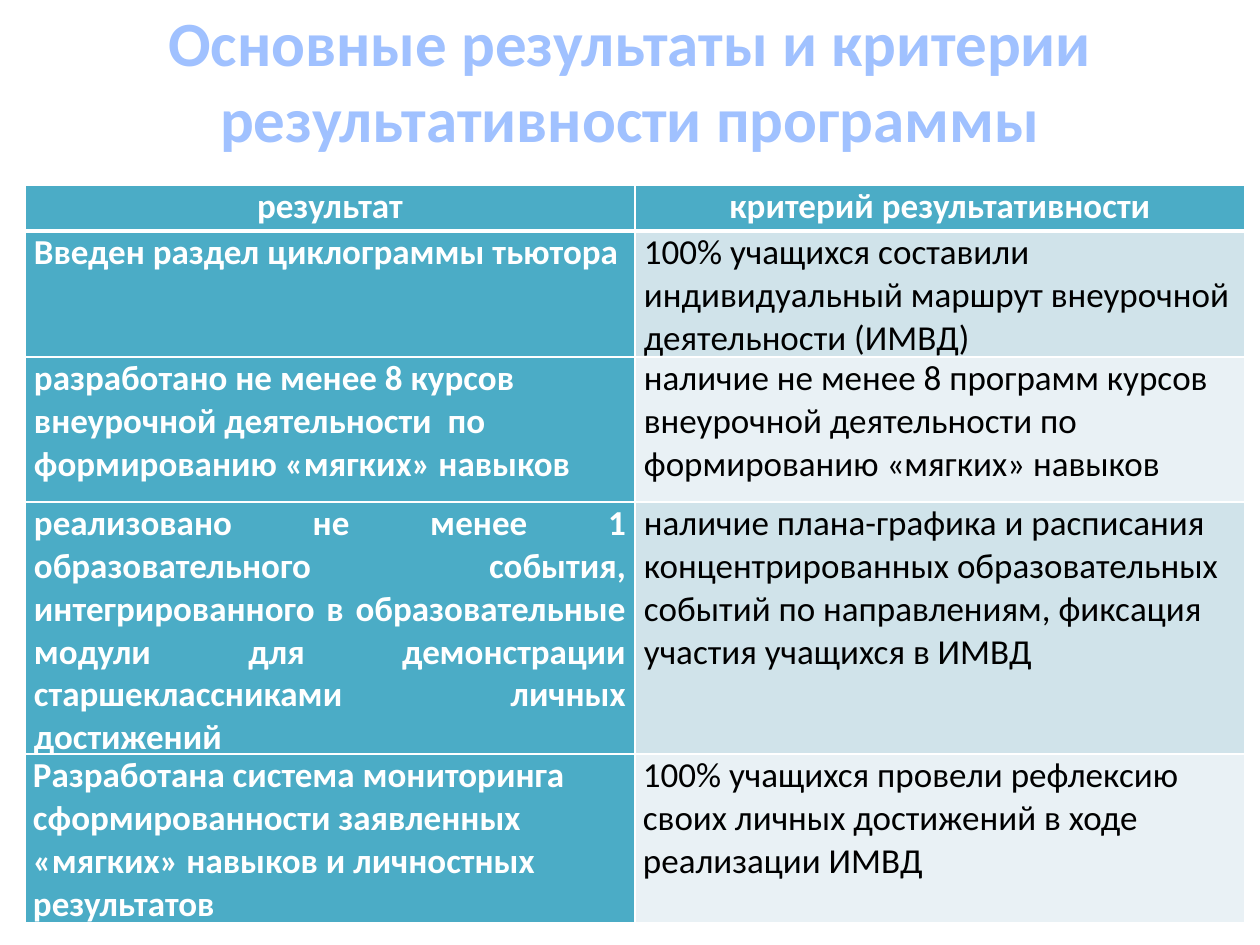
import dataclasses

import pptx
import pptx.dml.color
import pptx.enum.text
import pptx.oxml
import pptx.oxml.ns
import pptx.util

SCALE = 914400 / 126  # EMU in one px
FONT = "Calibri"
WHITE, BLACK, TEAL = "FFFFFF", "000000", "4BACC6"
BANDS = ("D0E3EA", "E9F1F5")
ALIGN = pptx.enum.text.PP_ALIGN
ANCHOR = pptx.enum.text.MSO_ANCHOR


@dataclasses.dataclass
class Row:
    left: str
    right: str
    high: int
    align: ALIGN = ALIGN.LEFT
    inset: int = 9


TITLE = "Основные результаты и критерии результативности программы"
ROWS = [
    Row("результат", "критерий результативности", 46, ALIGN.CENTER),
    Row("Введен раздел циклограммы тьютора",
        "100% учащихся составили индивидуальный маршрут внеурочной "
        "деятельности (ИМВД)", 111),
    Row("разработано не менее 8 курсов внеурочной деятельности  по "
        "формированию «мягких» навыков",
        "наличие не менее 8 программ курсов внеурочной деятельности по "
        "формированию «мягких» навыков", 145),
    Row("реализовано не менее 1 образовательного события, интегрированного "
        "в образовательные модули для демонстрации старшеклассниками "
        "личных достижений",
        "наличие плана-графика и расписания концентрированных "
        "образовательных событий по направлениям, фиксация участия "
        "учащихся в ИМВД", 145, ALIGN.JUSTIFY),
    Row("Разработана система мониторинга сформированности заявленных "
        "«мягких» навыков и личностных результатов",
        "100% учащихся провели рефлексию своих личных достижений в ходе "
        "реализации ИМВД", 145, inset=8),
]


def px(n: int) -> pptx.util.Emu:
    return pptx.util.Emu(round(n * SCALE))


def color(code: str) -> pptx.dml.color.RGBColor:
    return pptx.dml.color.RGBColor.from_string(code)


def write(frame, text: str, size: int, code: str, bold: bool, align) -> None:
    frame.text = text
    frame.word_wrap = True
    para = frame.paragraphs[0]
    para.alignment = align
    font = para.runs[0].font
    font.name, font.size, font.bold = FONT, pptx.util.Pt(size), bold
    font.color.rgb = color(code)


def edge(cell, side: str, width: int) -> None:
    props = cell._tc.get_or_add_tcPr()
    props.append(pptx.oxml.parse_xml(
        f'<a:ln{side} {pptx.oxml.ns.nsdecls("a")} w="{pptx.util.Pt(width)}">'
        f'<a:solidFill><a:srgbClr val="{WHITE}"/></a:solidFill></a:ln{side}>'))


def draw(cell, text: str, row: Row, index: int, col: int) -> None:
    solid = index == 0 or col == 0
    align = ALIGN.LEFT if col and index else row.align
    write(cell.text_frame, text, 20, WHITE if solid else BLACK, solid, align)
    cell.margin_left = cell.margin_right = px(row.inset)
    cell.margin_top = cell.margin_bottom = 0
    # Borders come before the fill; a thick line lies under the header
    for side in "LRTB":
        thick = (index, side) in ((0, "B"), (1, "T"))
        edge(cell, side, 3 if thick else 1)
    cell.fill.solid()
    cell.fill.fore_color.rgb = color(TEAL if solid else BANDS[(index - 1) % 2])


def main() -> None:
    deck = pptx.Presentation()
    deck.slide_width, deck.slide_height = px(1260), px(945)
    slide = deck.slides.add_slide(deck.slide_layouts[6])

    # Title
    box = slide.shapes.add_textbox(0, 0, px(1260), px(158))
    box.text_frame.vertical_anchor = ANCHOR.MIDDLE
    write(box.text_frame, TITLE, 36, "A0C1FF", True, ALIGN.CENTER)

    # Table of results and criteria
    high = sum(row.high for row in ROWS)
    table = slide.shapes.add_table(
        len(ROWS), 2, px(25), px(185), px(1220), px(high)).table
    for index, row in enumerate(ROWS):
        table.rows[index].height = px(row.high)
        for col, text in enumerate((row.left, row.right)):
            draw(table.cell(index, col), text, row, index, col)

    deck.save("out.pptx")


if __name__ == "__main__":
    main()
